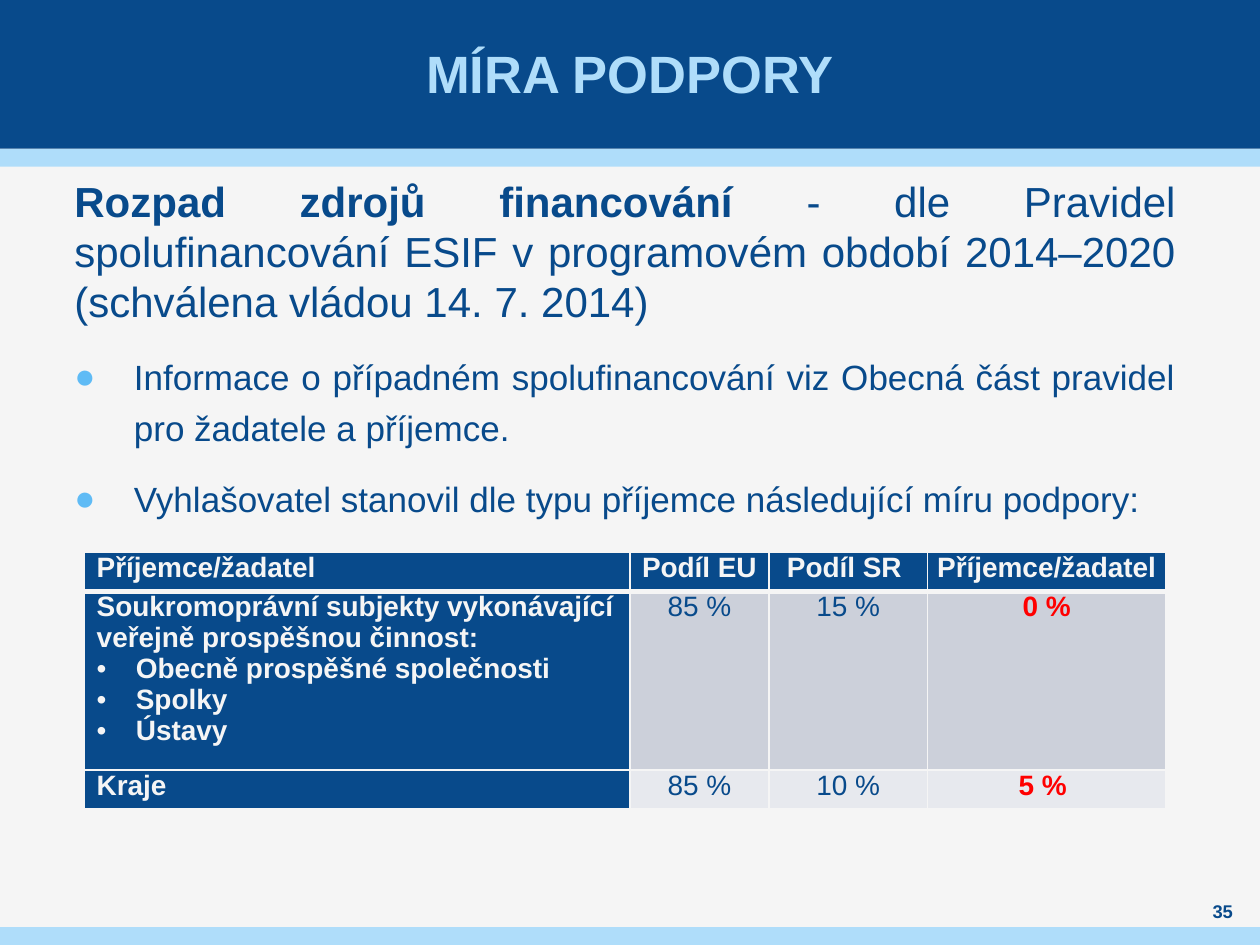
from lxml.etree import SubElement
from pptx import Presentation
from pptx.dml.color import RGBColor
from pptx.enum.shapes import MSO_SHAPE
from pptx.enum.text import MSO_ANCHOR, PP_ALIGN
from pptx.oxml.ns import qn
from pptx.util import Cm, Pt

NAVY, SKY, PAPER, RED = "084A8B", "AFDDFA", "F5F5F5", "FF0000"
LEFT, CENTER, JUSTIFY = PP_ALIGN.LEFT, PP_ALIGN.CENTER, PP_ALIGN.JUSTIFY
NO_MARGINS = dict(margin_left=0, margin_top=0, margin_right=0, margin_bottom=0)


def paint(color_format, color):
    """Set a fill or a font colour from a hex string."""
    if hasattr(color_format, "solid"):
        color_format.solid()
        color_format = color_format.fore_color
    color_format.rgb = RGBColor.from_string(color)


def write(paragraph, runs, size, color, align, left=0, hanging=0, bullet=None, bullet_color=None, **spacing):
    """Fill a paragraph with (text, bold) runs; left and hanging are in cm."""
    for name, value in dict(alignment=align, **spacing).items():
        setattr(paragraph, name, value)
    for text, bold in runs:
        run = paragraph.add_run()
        run.text = text
        for name, value in dict(name="Arial", size=Pt(size), bold=bold).items():
            setattr(run.font, name, value)
        paint(run.font.color, color)
    properties = paragraph._p.get_or_add_pPr()
    properties.set("marL", str(Cm(left)))
    properties.set("indent", str(-Cm(hanging)))
    if bullet:
        if bullet_color:
            SubElement(SubElement(properties, qn("a:buClr")), qn("a:srgbClr"), val=bullet_color)
        SubElement(properties, qn("a:buFont"), typeface="Arial")
        SubElement(properties, qn("a:buChar"), char=bullet)


presentation = Presentation()
presentation.slide_width, presentation.slide_height = Cm(25.4), Cm(19.05)
slide = presentation.slides.add_slide(presentation.slide_layouts[6])
paint(slide.background.fill, PAPER)

# Header and footer bands
for top, height, color in [(3, 0.36, SKY), (0, 3, NAVY), (18.69, 0.36, SKY)]:
    band = slide.shapes.add_shape(MSO_SHAPE.RECTANGLE, 0, Cm(top), presentation.slide_width, Cm(height))
    band.shadow.inherit = False
    paint(band.fill, color)
    band.line.fill.background()

# Title, body and slide number
frames = []
for box, anchor in [
    ((0, 0, 25.4, 2.92), MSO_ANCHOR.MIDDLE),
    ((1.5, 3.53, 22.2, 6), MSO_ANCHOR.TOP),
    ((24, 18.11, 1.3, 0.5), MSO_ANCHOR.MIDDLE),
]:
    frame = slide.shapes.add_textbox(*map(Cm, box)).text_frame
    for name, value in dict(NO_MARGINS, word_wrap=True, vertical_anchor=anchor).items():
        setattr(frame, name, value)
    frames.append(frame)
title, body, number = frames
write(title.paragraphs[0], [("MÍRA PODPORY", True)], 30, SKY, CENTER)
write(number.paragraphs[0], [("35", True)], 10.5, NAVY, CENTER)

spacing = dict(line_spacing=Pt(28.8), space_before=Pt(6), space_after=Pt(6))
write(
    body.paragraphs[0],
    [
        ("Rozpad zdrojů financování ", True),
        ("- dle Pravidel spolufinancování ESIF v programovém období 2014–2020 (schválena vládou 14. 7. 2014)", False),
    ],
    24, NAVY, JUSTIFY, **spacing,
)
for text in [
    "Informace o případném spolufinancování viz Obecná část pravidel pro žadatele a příjemce. ",
    "Vyhlašovatel stanovil dle typu příjemce následující míru podpory:",
]:
    write(body.add_paragraph(), [(text, False)], 20, NAVY, JUSTIFY, left=1.2, hanging=1.2,
          bullet="●", bullet_color="5FBBF5", **spacing)

# Support rates
rows = [
    ["Příjemce/žadatel", "Podíl EU", "Podíl SR ", "Příjemce/žadatel"],
    ["Soukromoprávní subjekty vykonávající veřejně prospěšnou činnost:", "85 %", "15 %", "0 %"],
    ["Kraje", "85 %", "10 %", "5 % "],
]
entity_types = ["Obecně prospěšné společnosti", "Spolky", "Ústavy"]
column_widths = [11, 2.8, 3.2, 4.8]
row_heights = [0.79, 3.6, 0.79]
row_fills = [NAVY, "CCD0DA", "E7E9EE"]

table = slide.shapes.add_table(
    len(rows), len(column_widths), Cm(1.7), Cm(11.13), Cm(sum(column_widths)), Cm(sum(row_heights))
).table
for column, width in zip(table.columns, column_widths):
    column.width = Cm(width)
for row, height in zip(table.rows, row_heights):
    row.height = Cm(height)

for row_index, texts in enumerate(rows):
    for column_index, text in enumerate(texts):
        cell = table.cell(row_index, column_index)
        for name, value in NO_MARGINS.items():
            setattr(cell, name, value)
        heading = row_index == 0 or column_index == 0
        last = column_index == len(texts) - 1
        color = PAPER if heading else RED if last else NAVY

        thick_side = {0: "B", 1: "T"}.get(row_index)
        for side in "LRTB":
            line = SubElement(cell._tc.get_or_add_tcPr(), qn(f"a:ln{side}"), w=str(Pt(3 if side == thick_side else 1)))
            SubElement(SubElement(line, qn("a:solidFill")), qn("a:srgbClr"), val=PAPER)
        paint(cell.fill, NAVY if heading else row_fills[row_index])

        align = CENTER if column_index else LEFT if row_index == 1 else JUSTIFY
        write(cell.text_frame.paragraphs[0], [(text, heading or last)], 16, color, align,
              left=0 if column_index else 0.25)

for entity_type in entity_types:
    write(table.cell(1, 0).text_frame.add_paragraph(), [(entity_type, True)], 16, PAPER, JUSTIFY,
          left=1.04, hanging=0.79, bullet="•")

presentation.save("out.pptx")
